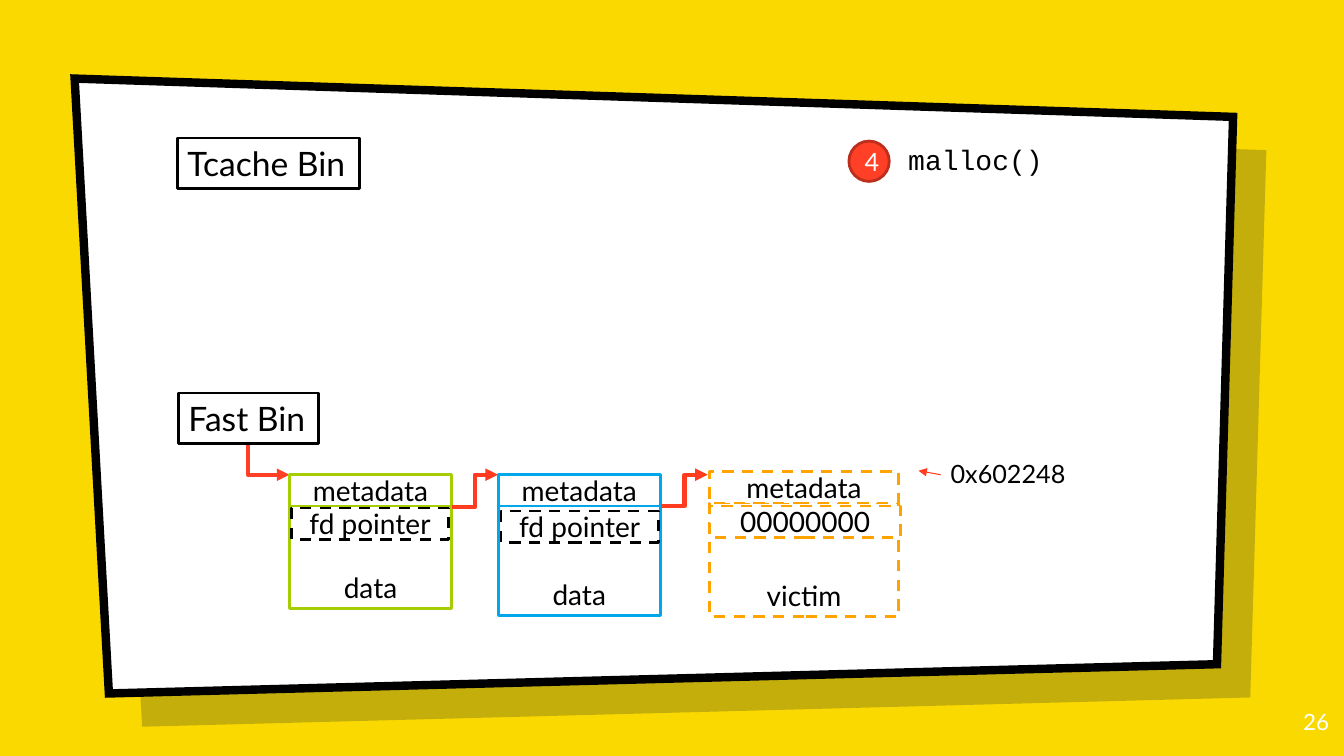
from lxml import etree
from pptx import Presentation
from pptx.dml.color import RGBColor
from pptx.enum.dml import MSO_LINE
from pptx.enum.shapes import MSO_CONNECTOR, MSO_SHAPE
from pptx.enum.text import MSO_ANCHOR, PP_ALIGN
from pptx.oxml.ns import qn
from pptx.util import Pt

PX = 9144
RECTANGLE, OVAL = MSO_SHAPE.RECTANGLE, MSO_SHAPE.OVAL
STRAIGHT, ELBOW = MSO_CONNECTOR.STRAIGHT, MSO_CONNECTOR.ELBOW
TOP, MIDDLE, BOTTOM = MSO_ANCHOR.TOP, MSO_ANCHOR.MIDDLE, MSO_ANCHOR.BOTTOM
LEFT, CENTER, RIGHT = PP_ALIGN.LEFT, PP_ALIGN.CENTER, PP_ALIGN.RIGHT
DASH = MSO_LINE.DASH
YELLOW, WHITE, BLACK, NAVY = "FAD900", "FFFFFF", "000000", "001936"
GREEN, BLUE, ORANGE = "A6CD02", "00A7EB", "FFA300"
RED, ARROW_RED, DARK_RED = "FF4026", "FF3B20", "BD2F1C"
ROW_HEIGHT = 31


def color(value):
    return RGBColor.from_string(value)


def lengths(*values):
    return [value * PX for value in values]


def paint(shape, fill, line=None, width=2, dash=None):
    shape.shadow.inherit = False
    shape.fill.solid()
    shape.fill.fore_color.rgb = color(fill)
    if line is None:
        shape.line.fill.background()
        return
    shape.line.color.rgb = color(line)
    shape.line.width = Pt(width)
    if dash is not None:
        shape.line.dash_style = dash


def write(shape, text, size, align=CENTER, anchor=MIDDLE, ink=BLACK, font="Lato", wrap=True):
    frame = shape.text_frame
    frame.text = text
    frame.word_wrap = wrap
    frame.vertical_anchor = anchor
    para = frame.paragraphs[0]
    para.alignment = align
    span = para.runs[0]
    span.font.name = font
    span.font.size = Pt(size)
    span.font.color.rgb = color(ink)
    return frame


def add_box(page, place, text, line, size=20, anchor=MIDDLE, dash=None):
    box = page.shapes.add_shape(RECTANGLE, *lengths(*place))
    paint(box, WHITE, line, dash=dash)
    write(box, text, size, anchor=anchor)


def add_bin(page, place, text):
    box = page.shapes.add_shape(RECTANGLE, *lengths(*place))
    paint(box, WHITE, BLACK)
    write(box, text, 24, LEFT, TOP, wrap=False)


def add_chunk(page, left, top, width, body_height, text, line, dash=None):
    body = (left, top + ROW_HEIGHT, width, body_height)
    add_box(page, body, text, line, anchor=BOTTOM, dash=dash)
    add_box(page, (left, top, width, ROW_HEIGHT), "metadata", line, dash=dash)


def add_label(page, place, text, size, align=LEFT, ink=BLACK, wrap=False):
    box = page.shapes.add_textbox(*lengths(*place))
    return write(box, text, size, align, TOP, ink, wrap=wrap)


def add_panel(page, points, fill):
    start, *others = points
    builder = page.shapes.build_freeform(*start, scale=PX)
    builder.add_line_segments(others, close=True)
    panel = builder.convert_to_shape()
    paint(panel, fill)
    return panel


def add_arrow(page, kind, ends, line=ARROW_RED, width=3):
    arrow = page.shapes.add_connector(kind, *lengths(*ends))
    arrow.line.color.rgb = color(line)
    arrow.line.width = Pt(width)
    properties = arrow._element.spPr
    etree.SubElement(properties.find(qn("a:ln")), qn("a:tailEnd"), type="triangle")
    etree.SubElement(properties, qn("a:effectLst"))
    return properties


def add_backdrop(page):
    page.background.fill.solid()
    page.background.fill.fore_color.rgb = color(YELLOW)
    corners = [(74, 78), (1223, 116), (1207, 659), (108, 688)]
    shade = add_panel(page, [(x + 33, y + 33) for x, y in corners], NAVY)
    tint = shade._element.spPr.find(qn("a:solidFill"))[0]
    etree.SubElement(tint, qn("a:alpha"), val="22000")
    panel = add_panel(page, corners, WHITE)
    paint(panel, WHITE, BLACK, 6)
    etree.SubElement(panel._element.spPr.find(qn("a:ln")), qn("a:miter"), lim="800000")


def add_fast_bin(page):
    corner = add_arrow(page, ELBOW, (282, 435, 251, 476), RED)
    corner.find(qn("a:prstGeom")).set("prst", "bentConnector2")
    corner.find(qn("a:xfrm")).set("rot", "16200000")
    add_chunk(page, 287, 471, 161, 102, "data", GREEN)
    add_chunk(page, 494, 471, 161, 109, "data", BLUE)
    add_bin(page, (177, 390, 139, 50), "Fast Bin")
    add_arrow(page, ELBOW, (448, 503, 494, 471))
    add_arrow(page, ELBOW, (656, 502, 702, 471))
    for left, top in ((289, 504), (497, 507)):
        add_box(page, (left, top, 156, ROW_HEIGHT), "fd pointer", BLACK, dash=DASH)
    add_chunk(page, 704, 468, 187, 113, "victim", ORANGE, DASH)
    add_box(page, (704, 502, 189, ROW_HEIGHT), "00000000", ORANGE, dash=DASH)
    add_label(page, (933, 450, 134, 40), "0x602248", 18)
    add_arrow(page, STRAIGHT, (933, 471, 911, 467), width=0.75)


def add_step(page):
    badge = page.shapes.add_shape(OVAL, *lengths(842, 140, 40, 40))
    paint(badge, RED, DARK_RED)
    write(badge, "4", 18, ink=WHITE)
    call = page.shapes.add_shape(RECTANGLE, *lengths(891, 132, 230, 53))
    paint(call, WHITE)
    write(call, "malloc()", 20, LEFT, font="Courier New")


def main():
    deck = Presentation()
    deck.slide_width, deck.slide_height = lengths(1333, 750)
    page = deck.slides.add_slide(deck.slide_layouts[6])
    add_backdrop(page)
    number = add_label(page, (1248, 693, 80, 57), "26", 16, RIGHT, WHITE, True)
    number.margin_top = number.margin_bottom = 10 * PX
    add_fast_bin(page)
    add_bin(page, (176, 137, 181, 50), "Tcache Bin")
    add_step(page)
    deck.save("out.pptx")


if __name__ == "__main__":
    main()
